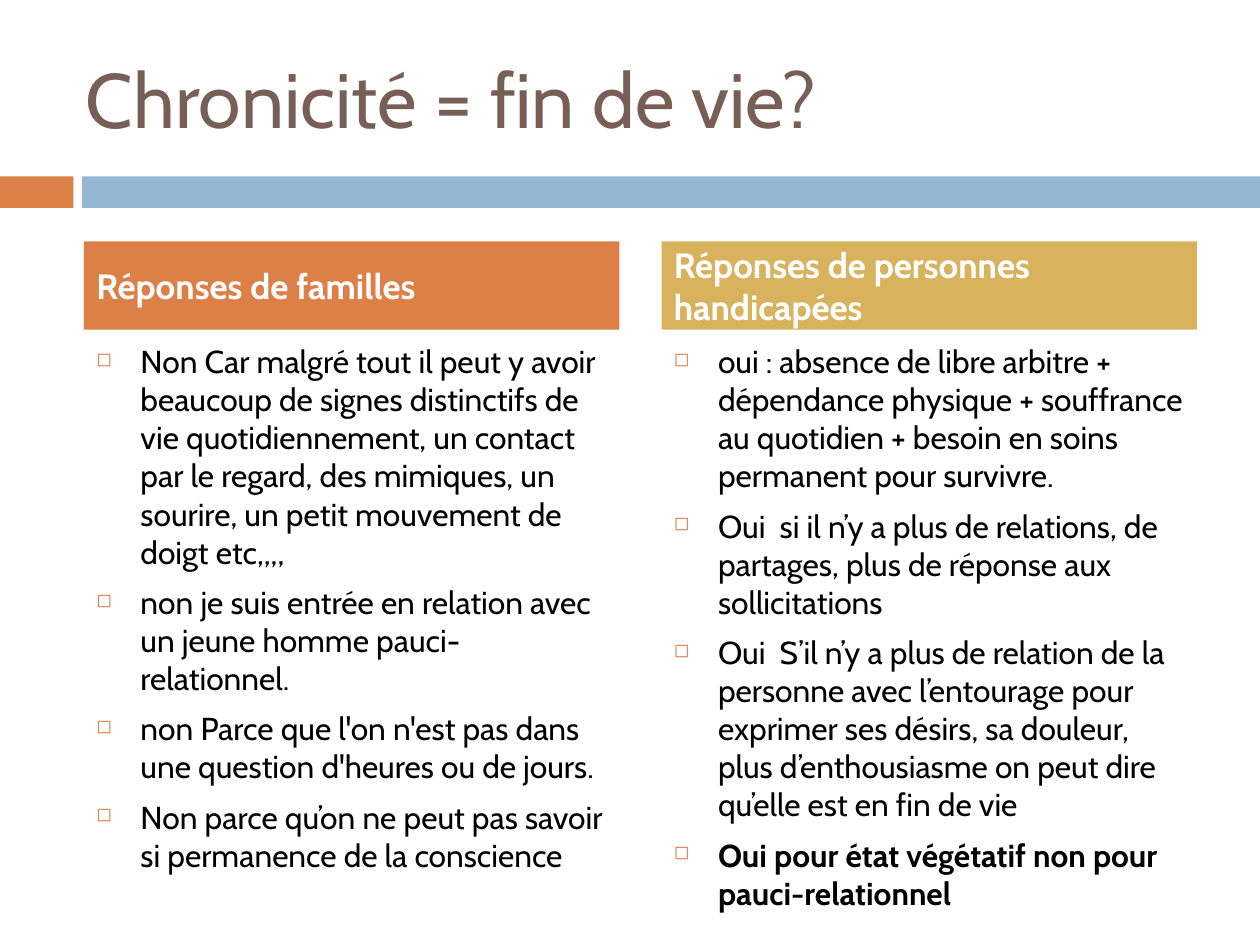
from dataclasses import dataclass

from lxml import etree
from pptx import Presentation
from pptx.dml.color import RGBColor
from pptx.enum import shapes, text
from pptx.oxml import ns
from pptx.util import Pt


@dataclass(frozen=True)
class Theme:
    font: str = "Cabin"
    brown: str = "775F55"
    orange: str = "DD8047"
    blue: str = "94B6D2"
    gold: str = "D8B25C"
    white: str = "FFFFFF"
    black: str = "000000"
    title: float = 44
    heading: float = 20
    body: float = 18.1
    indent: float = 25.2
    gap: float = 7


T = Theme()

FAMILIES = [
    "Non Car malgré tout il peut y avoir beaucoup de signes distinctifs de vie "
    "quotidiennement, un contact par le regard, des mimiques, un sourire, "
    "un petit mouvement de doigt etc,,,,",
    "non je suis entrée en relation avec un jeune homme pauci-relationnel.",
    "non Parce que l'on n'est pas dans une question d'heures ou de jours.",
    "Non parce qu’on ne peut pas savoir si permanence de la conscience",
]
DISABLED = [
    "oui : absence de libre arbitre + dépendance physique + souffrance "
    "au quotidien + besoin en soins permanent pour survivre.",
    "Oui  si il n’y a plus de relations, de partages, plus de réponse aux sollicitations",
    "Oui  S’il n’y a plus de relation de la personne avec l’entourage pour exprimer "
    "ses désirs, sa douleur, plus d’enthousiasme on peut dire qu’elle est en fin de vie",
    "Oui pour état végétatif non pour pauci-relationnel",
]


def add_bullet(p):
    pPr = p._p.get_or_add_pPr()
    pPr.set("marL", str(Pt(T.indent)))
    pPr.set("indent", str(-Pt(T.indent)))
    color = etree.SubElement(pPr, ns.qn("a:buClr"))
    etree.SubElement(color, ns.qn("a:srgbClr"), val=T.orange)
    etree.SubElement(pPr, ns.qn("a:buSzPct"), val="60000")
    etree.SubElement(pPr, ns.qn("a:buChar"), char="◻")


def write(sp, lines, size, color, bold=(), bullets=False, before=0,
          anchor=text.MSO_ANCHOR.MIDDLE):
    tf = sp.text_frame
    tf.word_wrap = True
    tf.vertical_anchor = anchor
    for i, line in enumerate(lines):
        p = tf.add_paragraph() if i else tf.paragraphs[0]
        p.alignment = text.PP_ALIGN.LEFT
        p.space_before = Pt(before)
        if bullets:
            add_bullet(p)
        r = p.add_run()
        r.text = line
        r.font.name = T.font
        r.font.size = Pt(size)
        r.font.bold = line in bold
        r.font.color.rgb = RGBColor.from_string(color)


def add_block(s, x, y, w, h, fill):
    sp = s.shapes.add_shape(shapes.MSO_SHAPE.RECTANGLE, Pt(x), Pt(y), Pt(w), Pt(h))
    sp.shadow.inherit = False
    sp.fill.solid()
    sp.fill.fore_color.rgb = RGBColor.from_string(fill)
    sp.line.fill.background()
    return sp


def add_text(s, x, y, w, h, lines, **style):
    sp = s.shapes.add_textbox(Pt(x), Pt(y), Pt(w), Pt(h))
    write(sp, lines, **style)


def add_band(s, x, y, w, h):
    tab, gap = 42, 4.8
    add_block(s, x, y, tab, h, T.orange)
    add_block(s, x + tab + gap, y, w - tab - gap, h, T.blue)


def add_column(s, x, y, w, h, heading, fill, answers, bold=()):
    head_h, gap = 50.4, 3.6
    head = add_block(s, x, y, w, head_h, fill)
    write(head, [heading], T.heading, T.white, bold=[heading], before=T.gap)
    top = head_h + gap
    add_text(s, x, y + top, w, h - top, answers, size=T.body, color=T.black,
             bold=bold, bullets=True, before=T.gap, anchor=text.MSO_ANCHOR.TOP)


def main():
    prs = Presentation()
    prs.slide_width, prs.slide_height = Pt(720), Pt(540)
    s = prs.slides.add_slide(prs.slide_layouts[6])
    add_band(s, 0, 100.8, 720, 18)
    add_text(s, 42, 21.6, 642, 68.4, ["Chronicité = fin de vie?"],
             size=T.title, color=T.brown)
    columns = [
        ("Réponses de familles", T.orange, FAMILIES, ()),
        ("Réponses de personnes handicapées", T.gold, DISABLED, DISABLED[-1:]),
    ]
    for i, column in enumerate(columns):
        add_column(s, 48 + 330 * i, 138, 306, 336, *column)
    prs.save("out.pptx")


if __name__ == "__main__":
    main()
